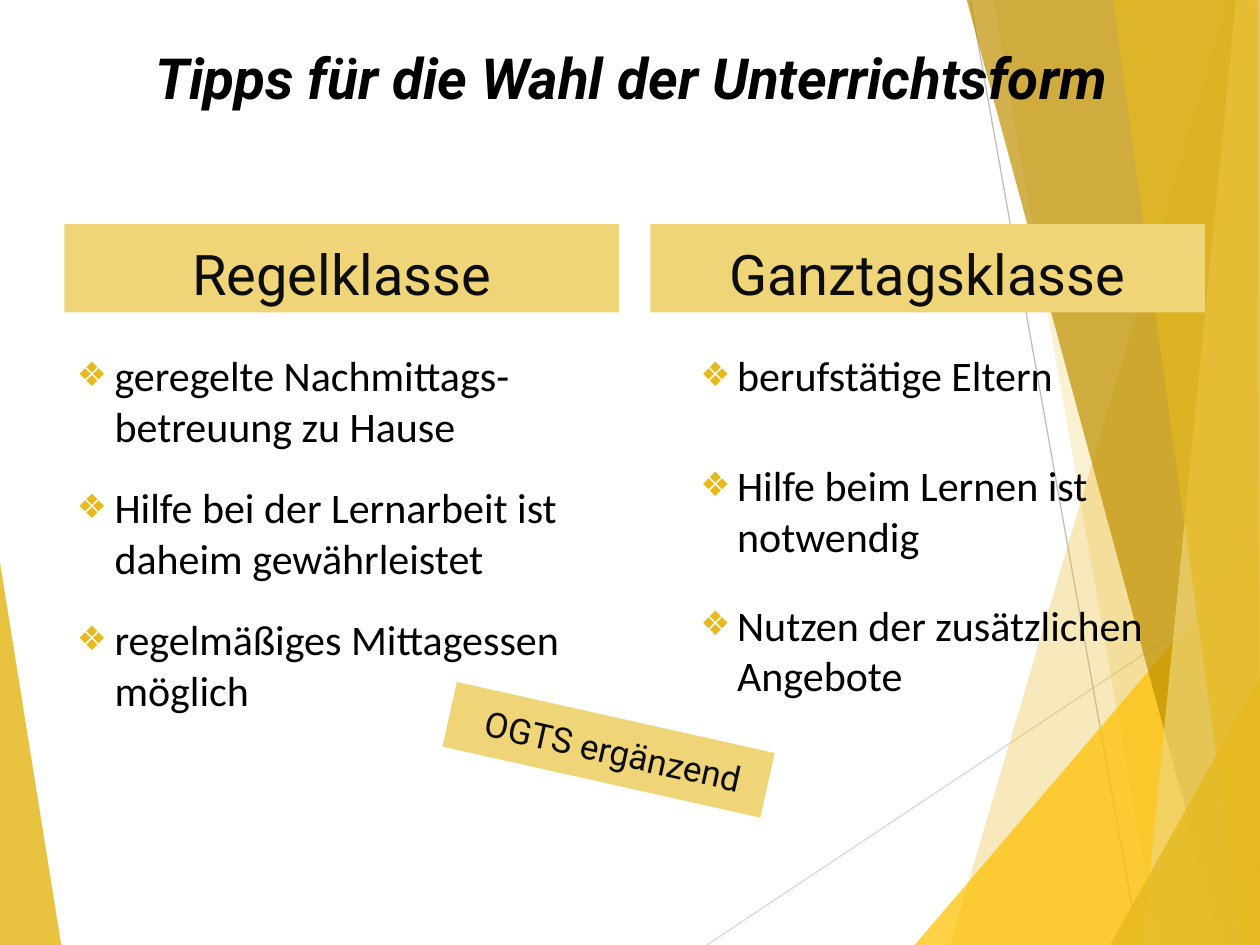
from lxml import etree
from pptx import Presentation
from pptx.dml.color import RGBColor
from pptx.enum.shapes import MSO_CONNECTOR, MSO_SHAPE
from pptx.enum.text import MSO_ANCHOR, PP_ALIGN
from pptx.oxml.ns import qn
from pptx.util import Cm, Pt

RECT, STRAIGHT = MSO_SHAPE.RECTANGLE, MSO_CONNECTOR.STRAIGHT
CENTER, LEFT = PP_ALIGN.CENTER, PP_ALIGN.LEFT
TOP, MIDDLE, BOTTOM = MSO_ANCHOR.TOP, MSO_ANCHOR.MIDDLE, MSO_ANCHOR.BOTTOM

COLORS = {
    "gold": "E6B91E", "amber": "FFC000", "bronze": "BF9000", "sand": "F0D578",
    "silver": "D9D9D9", "gray": "BFBFBF", "black": "000000", "ink": "0D0D0D",
    "white": "FFFFFF",
}
TITLE = {"name": "Roboto", "size": Pt(32.4), "bold": True, "italic": True}
HEADING = {"name": "Roboto", "size": Pt(32)}
BODY = {"name": "Calibri", "size": Pt(24)}
LABEL = {"name": "Roboto", "size": Pt(20)}

LEFT_EDGE = [("gold", 85, [(-0.03, 11.15), (1.24, 19.08), (-0.03, 19.05)])]
RAYS = [
    ("silver", (14.25, 19.05), (25.43, 11.61)),
    ("gray", (19.56, 0), (22.96, 19.05)),
]
FACETS = [
    ("gold", 30, [(24.77, 0), (19.15, 19.05), (25.45, 19.08), (25.43, 0.03)]),
    ("gold", 20, [(20.02, -0.03), (23.34, 19.05), (25.43, 19.05), (25.43, -0.03)]),
    ("amber", 72, [(18.44, 19.05), (25.4, 10.9), (25.43, 19.05)]),
    ("bronze", 70, [(19.48, -0.03), (24.64, 19.05), (25.43, 19.02), (25.43, -0.03)]),
    ("sand", 70, [(24.92, -0.03), (23.04, 19.05), (25.43, 19.05), (25.4, -0.03)]),
    ("gold", 65, [(22.43, -0.03), (25.04, 19.05), (25.4, 19.05), (25.35, -0.03)]),
    ("gold", 80, [(22.38, 19.05), (25.43, 13.59), (25.43, 19.05)]),
]
REGULAR = [
    ("geregelte Nachmittags-\vbetreuung zu Hause", 12),
    ("Hilfe bei der Lernarbeit ist daheim gewährleistet", 12),
    ("regelmäßiges Mittagessen möglich", 0),
]
ALL_DAY = [
    ("berufstätige Eltern", 24),
    ("Hilfe beim Lernen ist notwendig", 12),
    ("Nutzen der zusätzlichen Angebote", 0),
]


def rgb(name):
    """Return the named colour."""
    return RGBColor.from_string(COLORS[name])


def paint(sp, color):
    """Give a shape a flat fill without line or shadow."""
    sp.shadow.inherit = False
    sp.fill.solid()
    sp.fill.fore_color.rgb = rgb(color)
    sp.line.fill.background()


def write(p, text, font, color, align=LEFT, before=0, after=0):
    """Write one formatted paragraph."""
    p.text = text
    p.alignment, p.space_before, p.space_after = align, Pt(before), Pt(after)
    for r in p.runs:
        for key, value in font.items():
            setattr(r.font, key, value)
        r.font.color.rgb = rgb(color)


def add_bullet(p, margin, hanging):
    """Put a gold diamond bullet on a paragraph with a hanging indent."""
    pPr = p._p.get_or_add_pPr()
    pPr.set("marL", str(Cm(margin)))
    pPr.set("indent", str(-Cm(hanging)))
    clr = etree.SubElement(pPr, qn("a:buClr"))
    etree.SubElement(clr, qn("a:srgbClr"), val=COLORS["gold"])
    etree.SubElement(pPr, qn("a:buSzPct"), val="80000")
    etree.SubElement(pPr, qn("a:buFont"), typeface=BODY["name"])
    etree.SubElement(pPr, qn("a:buChar"), char="❖")


def add_facets(slide, x, y, facets):
    """Draw translucent polygons from the given corner."""
    for color, opacity, points in facets:
        pts = [(Cm(x + px), Cm(y + py)) for px, py in points]
        fb = slide.shapes.build_freeform(*pts[0])
        fb.add_line_segments(pts[1:])
        sp = fb.convert_to_shape()
        paint(sp, color)
        clr = sp.fill._xPr.find(".//" + qn("a:srgbClr"))
        etree.SubElement(clr, qn("a:alpha"), val=str(opacity * 1000))


def add_background(slide, x, y):
    """Draw the facets and thin rays behind the content."""
    add_facets(slide, x, y, LEFT_EDGE)
    for color, (x1, y1), (x2, y2) in RAYS:
        ray = slide.shapes.add_connector(
            STRAIGHT, Cm(x + x1), Cm(y + y1), Cm(x + x2), Cm(y + y2))
        ray.line.color.rgb = rgb(color)
        ray.line.width = Pt(0.75)
        etree.SubElement(ray._element.spPr, qn("a:effectLst"))
    add_facets(slide, x, y, FACETS)


def add_text_box(slide, x, y, w, h):
    """Add a wrapping text box and return its frame."""
    tf = slide.shapes.add_textbox(Cm(x), Cm(y), Cm(w), Cm(h)).text_frame
    tf.word_wrap, tf.vertical_anchor = True, TOP
    return tf


def add_title(slide, x, y, w, h):
    """Add the centred slide title."""
    tf = add_text_box(slide, x, y, w, h)
    write(tf.paragraphs[0], "Tipps für die Wahl der Unterrichtsform",
          TITLE, "black", CENTER)


def add_banner(slide, x, y, w, h, text, font, anchor):
    """Add a sand-coloured rectangle with centred text."""
    sp = slide.shapes.add_shape(RECT, Cm(x), Cm(y), Cm(w), Cm(h))
    paint(sp, "sand")
    tf = sp.text_frame
    tf.word_wrap, tf.vertical_anchor = True, anchor
    write(tf.paragraphs[0], text, font, "ink", CENTER, 5.8)
    return sp


def add_column(slide, x, y, w, h, heading, items, before, margin, hanging):
    """Add a heading banner with its bulleted list below."""
    add_banner(slide, x, y, 11.18, 1.78, heading, HEADING, BOTTOM)
    tf = add_text_box(slide, x, y + 2.41, w, h - 2.41)
    for i, (text, after) in enumerate(items):
        p = tf.add_paragraph() if i else tf.paragraphs[0]
        write(p, text, BODY, "black", LEFT, before, after)
        add_bullet(p, margin, hanging)


def add_label(slide, x, y, w, h):
    """Add the tilted label between the columns."""
    sp = add_banner(slide, x, y, w, h, "OGTS ergänzend", LABEL, MIDDLE)
    sp.rotation = 12.6
    sp.line.color.rgb = rgb("white")
    sp.line.width = Pt(0.85)
    sp.text_frame.paragraphs[0]._p.get_or_add_pPr().set("marL", str(Cm(0.18)))


def main():
    """Build and save the slide."""
    prs = Presentation()
    prs.slide_width, prs.slide_height = Cm(25.4), Cm(19.05)
    slide = prs.slides.add_slide(prs.slide_layouts[6])
    add_background(slide, 0, 0)
    add_title(slide, 1.3, 0.74, 22.86, 3.18)
    add_column(slide, 1.3, 4.52, 11.4, 11.88, "Regelklasse", REGULAR, 5.8, 0.76, 0.76)
    add_column(slide, 13.11, 4.52, 11.84, 11.6, "Ganztagsklasse", ALL_DAY, 10, 1.5, 0.74)
    add_label(slide, 8.97, 14.43, 6.6, 1.37)
    prs.save("out.pptx")


if __name__ == "__main__":
    main()
